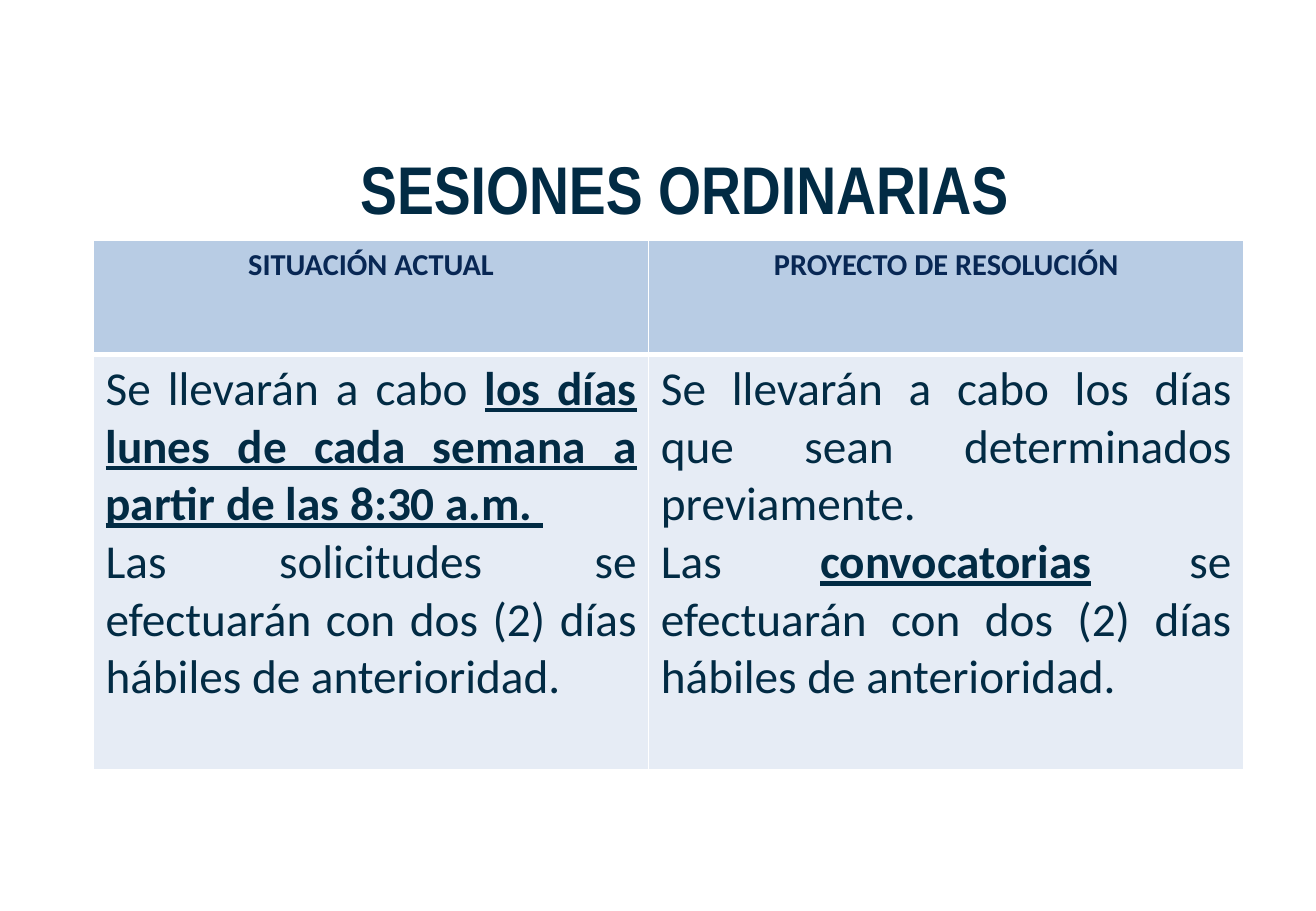
from lxml.etree import SubElement
from pptx import Presentation
from pptx.dml.color import RGBColor
from pptx.enum.text import MSO_ANCHOR, PP_ALIGN
from pptx.oxml.ns import qn
from pptx.util import Inches, Pt

WIDTH, HEIGHT = Inches(10.83), Inches(7.5)
NAVY, HEADING_BLUE = "022B44", "082754"
HEADER_FILL, BODY_FILL, WHITE = "B8CCE4", "E6ECF5", "FFFFFF"
COLUMN_SHARES = (0.422, 0.452)
ROW_SHARES = (0.125, 0.456)
HEADINGS = ("SITUACIÓN ACTUAL", "PROYECTO DE RESOLUCIÓN")
RULES = (
    (
        (("Se llevarán a cabo ", False),
         ("los días lunes de cada semana a partir de las 8:30 a.m. ", True)),
        (("Las solicitudes se efectuarán con dos (2) días hábiles de anterioridad.", False),),
    ),
    (
        (("Se llevarán a cabo los días que sean determinados previamente. ", False),),
        (("Las ", False), ("convocatorias", True),
         (" se efectuarán con dos (2) días hábiles de anterioridad.", False)),
    ),
)


def color(value):
    return RGBColor.from_string(value)


def place(left, top, width, height):
    return (round(WIDTH * left), round(HEIGHT * top),
            round(WIDTH * width), round(HEIGHT * height))


def format_run(run, size, font, ink, bold=False, underline=False):
    run.font.size = Pt(size)
    run.font.name = font
    run.font.color.rgb = color(ink)
    run.font.bold = bold
    run.font.underline = underline


def add_title(slide, title):
    frame = slide.shapes.add_textbox(*place(0.095, 0.123, 0.85, 0.165)).text_frame
    frame.word_wrap = True
    frame.vertical_anchor = MSO_ANCHOR.MIDDLE
    frame.text = title
    heading = frame.paragraphs[0]
    heading.alignment = PP_ALIGN.CENTER
    format_run(heading.runs[0], 40, "Arial Narrow", NAVY, bold=True)


def style_cell(cell, background, top, bottom):
    properties = cell._tc.get_or_add_tcPr()
    for side, points in (("L", 1), ("R", 1), ("T", top), ("B", bottom)):
        border = SubElement(properties, qn(f"a:ln{side}"), w=str(Pt(points)))
        stroke = SubElement(border, qn("a:solidFill"))
        SubElement(stroke, qn("a:srgbClr"), val=WHITE)
    cell.fill.solid()
    cell.fill.fore_color.rgb = color(background)


def fill_heading(cell, heading):
    style_cell(cell, HEADER_FILL, top=1, bottom=3)
    cell.text_frame.text = heading
    label = cell.text_frame.paragraphs[0]
    label.alignment = PP_ALIGN.CENTER
    format_run(label.runs[0], 18, "Calibri", HEADING_BLUE, bold=True)


def fill_rules(cell, rules):
    style_cell(cell, BODY_FILL, top=3, bottom=1)
    frame = cell.text_frame
    for index, rule in enumerate(rules):
        sentence = frame.add_paragraph() if index else frame.paragraphs[0]
        sentence.alignment = PP_ALIGN.JUSTIFY
        for words, stressed in rule:
            phrase = sentence.add_run()
            phrase.text = words
            format_run(phrase, 28, "Calibri", NAVY, stressed, stressed)


def add_comparison(slide):
    area = place(0.071, 0.264, sum(COLUMN_SHARES), sum(ROW_SHARES))
    comparison = slide.shapes.add_table(len(ROW_SHARES), len(COLUMN_SHARES), *area).table
    for column, share in zip(comparison.columns, COLUMN_SHARES):
        column.width = round(WIDTH * share)
    for row, share in zip(comparison.rows, ROW_SHARES):
        row.height = round(HEIGHT * share)
    for index, (heading, rules) in enumerate(zip(HEADINGS, RULES)):
        fill_heading(comparison.cell(0, index), heading)
        fill_rules(comparison.cell(1, index), rules)


def main():
    deck = Presentation()
    deck.slide_width, deck.slide_height = WIDTH, HEIGHT
    slide = deck.slides.add_slide(deck.slide_layouts[6])
    add_title(slide, "SESIONES ORDINARIAS")
    add_comparison(slide)
    deck.save("out.pptx")


if __name__ == "__main__":
    main()
